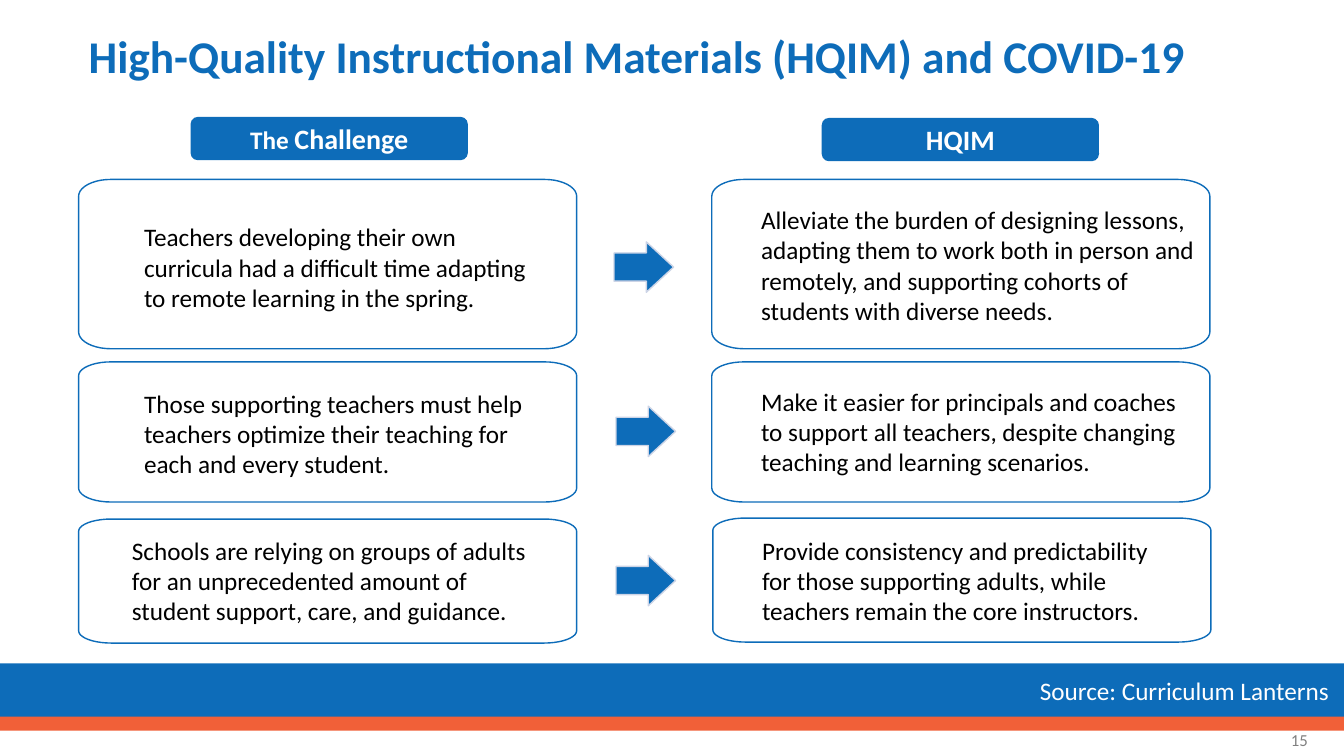
from math import cos, pi, sin

from pptx import Presentation
from pptx.dml.color import RGBColor
from pptx.enum.shapes import MSO_SHAPE
from pptx.enum.text import MSO_ANCHOR, MSO_AUTO_SIZE, PP_ALIGN
from pptx.util import Pt

SCALE = 9144  # EMU per px, 100 px to the inch
COLOURS = {"blue": "0D6CB9", "orange": "F16038", "white": "FFFFFF",
           "black": "000000", "grey": "808080", "pale": "CCD4E6"}


def paint(shape, fill, line=None):
    shape.shadow.inherit = False
    shape.fill.solid()
    shape.fill.fore_color.rgb = RGBColor.from_string(COLOURS[fill])
    if line:
        shape.line.color.rgb = RGBColor.from_string(COLOURS[line])
        shape.line.width = Pt(1)
    else:
        shape.line.fill.background()


def write(box, spans, colour="black", bold=False, align=PP_ALIGN.LEFT,
          anchor=MSO_ANCHOR.TOP, spacing=None):
    """Fill a shape with one paragraph of (text, size) spans."""
    frame = box.text_frame
    frame.word_wrap = True
    frame.auto_size = MSO_AUTO_SIZE.NONE
    frame.vertical_anchor = anchor
    para = frame.paragraphs[0]
    para.alignment = align
    para.line_spacing = spacing
    for text, size in spans:
        span = para.add_run()
        span.text = text
        span.font.name = "Calibri"
        span.font.size = Pt(size)
        span.font.bold = bold
        span.font.color.rgb = RGBColor.from_string(COLOURS[colour])


deck = Presentation()
deck.slide_width, deck.slide_height = 1333 * SCALE, 750 * SCALE
page = deck.slides.add_slide(deck.slide_layouts[5])
shapes = page.shapes

# Footer bands
for top, height, colour in [(658, 58, "blue"), (711, 14, "orange")]:
    band = shapes.add_shape(MSO_SHAPE.RECTANGLE, 0, top * SCALE,
                            1333 * SCALE, height * SCALE)
    paint(band, colour)

# Title
title = shapes.title
title.left, title.top = 78 * SCALE, 17 * SCALE
title.width, title.height = 1216 * SCALE, 82 * SCALE
write(title, [("High-Quality Instructional Materials (HQIM) and COVID-19", 32.4)],
      colour="blue", bold=True, anchor=MSO_ANCHOR.MIDDLE, spacing=0.9)

# Column headings
headings = [(189, 116, [("The ", 18), ("Challenge", 20)]),
            (815, 117, [("HQIM", 20)])]
for left, top, spans in headings:
    heading = shapes.add_shape(MSO_SHAPE.ROUNDED_RECTANGLE, left * SCALE, top * SCALE,
                               275 * SCALE, 43 * SCALE)
    paint(heading, "blue")
    write(heading, spans, colour="white", bold=True, align=PP_ALIGN.CENTER,
          anchor=MSO_ANCHOR.MIDDLE)

# Panels: left, top, height, then text left, top, width and wording
panels = [
    (78, 178, 168, 133, 215, 412, "Teachers developing their own curricula had a "
     "difficult time adapting to remote learning in the spring."),
    (78, 359, 139, 133, 380, 412, "Those supporting teachers must help teachers "
     "optimize their teaching for each and every student."),
    (78, 515, 123, 121, 526, 412, "Schools are relying on groups of adults for an "
     "unprecedented amount of student support, care, and guidance."),
    (706, 178, 168, 745, 198, 477, "Alleviate the burden of designing lessons, adapting "
     "them to work both in person and remotely, and supporting cohorts of students "
     "with diverse needs."),
    (706, 359, 139, 745, 378, 434, "Make it easier for principals and coaches to support "
     "all teachers, despite changing teaching and learning scenarios."),
    (707, 514, 123, 746, 526, 412, "Provide consistency and predictability for those "
     "supporting adults, while teachers remain the core instructors."),
]
panel_width, corner_width, corner_steps = 494, 32, 10
for left, top, height, text_left, text_top, text_width, wording in panels:
    corner_height = height / 10
    centres = [(left + panel_width - corner_width, top + height - corner_height),
               (left + corner_width, top + height - corner_height),
               (left + corner_width, top + corner_height),
               (left + panel_width - corner_width, top + corner_height)]
    outline = []
    for quarter, (x, y) in enumerate(centres):
        for step in range(corner_steps + 1):
            angle = (quarter + step / corner_steps) * pi / 2
            outline.append((round((x + corner_width * cos(angle)) * SCALE),
                            round((y + corner_height * sin(angle)) * SCALE)))
    builder = shapes.build_freeform(*outline[0])
    builder.add_line_segments(outline[1:], close=True)
    paint(builder.convert_to_shape(), "white", "blue")
    box = shapes.add_textbox(text_left * SCALE, text_top * SCALE, text_width * SCALE,
                             (131 if text_width == 477 else 101) * SCALE)
    write(box, [(wording, 18)])

# Arrows from challenge to answer
for left, top in [(609, 240), (611, 403), (611, 551)]:
    arrow = shapes.add_shape(MSO_SHAPE.RIGHT_ARROW, left * SCALE, top * SCALE,
                             59 * SCALE, 50 * SCALE)
    arrow.adjustments[0] = 0.56
    arrow.adjustments[1] = 0.54
    paint(arrow, "blue", "pale")

# Source and page number
source = shapes.add_textbox(1006 * SCALE, 665 * SCALE, 322 * SCALE, 40 * SCALE)
write(source, [("Source: Curriculum Lanterns", 18)], colour="white", align=PP_ALIGN.RIGHT)
number = shapes.add_textbox(1007 * SCALE, 714 * SCALE, 300 * SCALE, 40 * SCALE)
write(number, [("15", 12)], colour="grey", align=PP_ALIGN.RIGHT, anchor=MSO_ANCHOR.MIDDLE)

deck.save("out.pptx")
